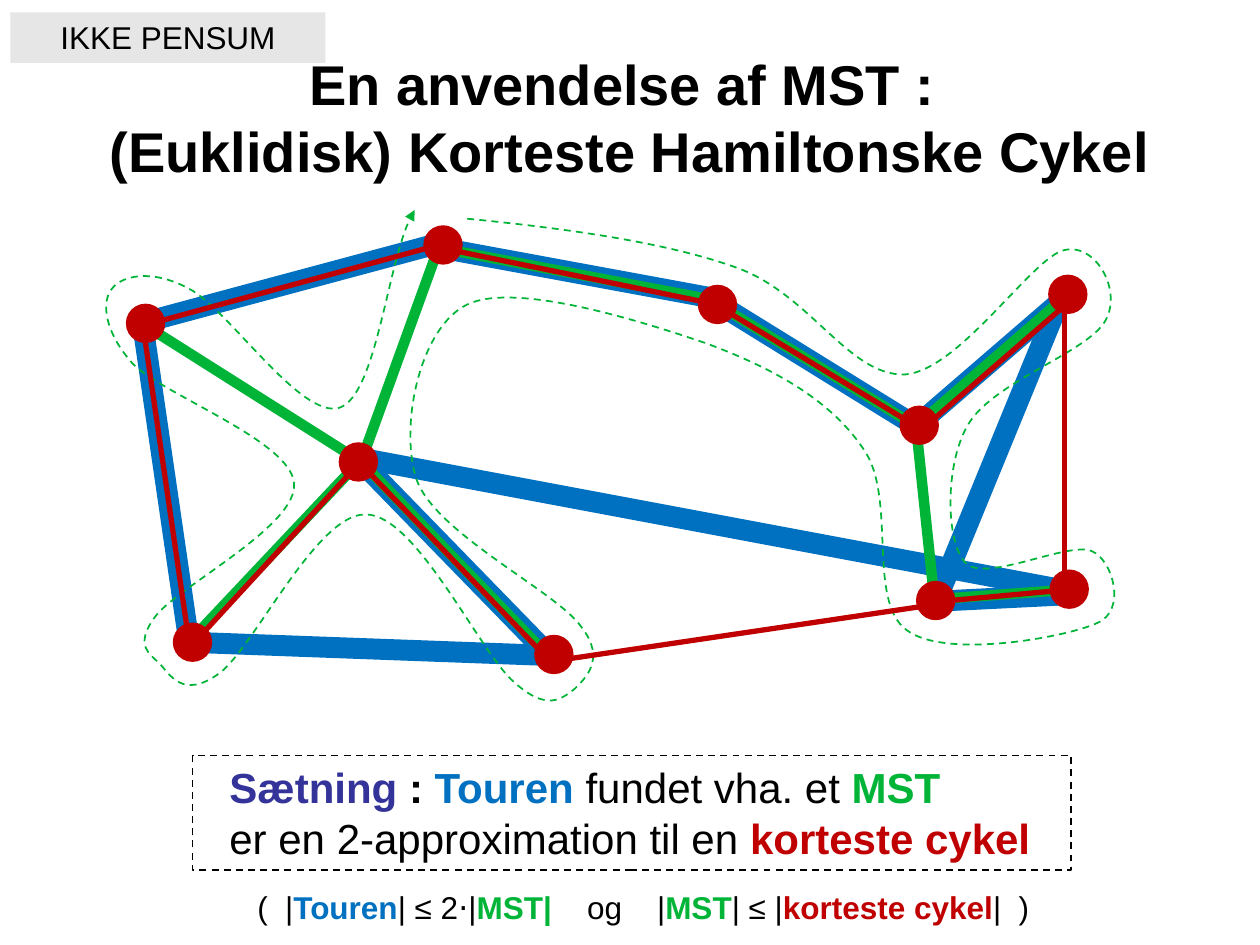
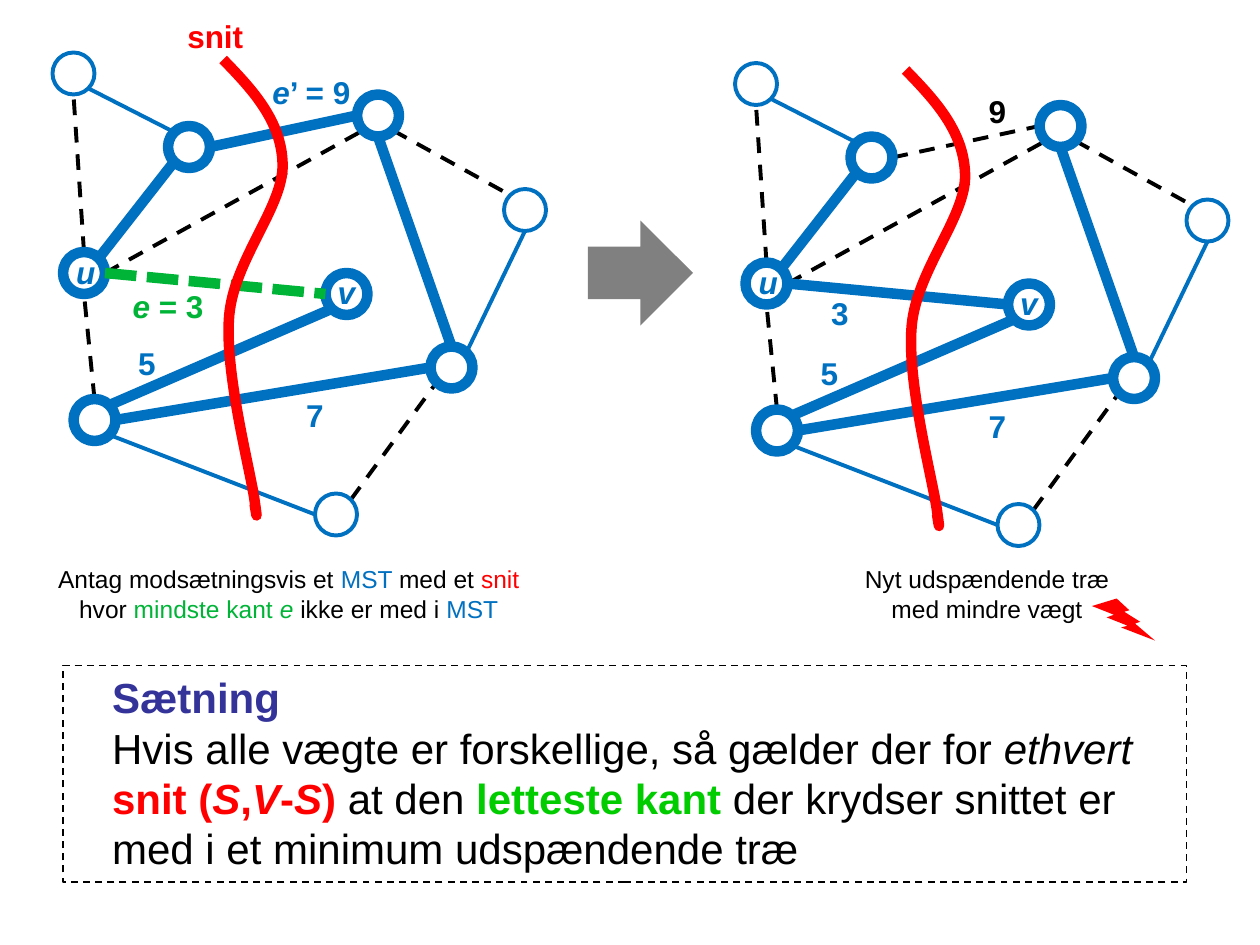
"""Build two slides about minimum spanning trees."""
from typing import NamedTuple

from lxml.etree import SubElement
from pptx import Presentation
from pptx.dml.color import RGBColor
from pptx.enum.dml import MSO_LINE as Dash
from pptx.enum.shapes import MSO_CONNECTOR, MSO_SHAPE as Shape
from pptx.enum.text import MSO_ANCHOR as Anchor, MSO_AUTO_SIZE, PP_ALIGN as Align
from pptx.oxml.ns import qn
from pptx.util import Pt

BLACK = RGBColor(0x00, 0x00, 0x00)
BLUE = RGBColor(0x00, 0x70, 0xC0)
GREEN = RGBColor(0x00, 0xB4, 0x38)
BRIGHT_GREEN = RGBColor(0x00, 0xCC, 0x00)
DARK_RED = RGBColor(0xC0, 0x00, 0x00)
RED = RGBColor(0xFF, 0x00, 0x00)
INDIGO = RGBColor(0x33, 0x33, 0x99)
GRAY = RGBColor(0x80, 0x80, 0x80)
LIGHT_GRAY = RGBColor(0xE6, 0xE6, 0xE6)
FONT = "Arial"


class Run(NamedTuple):
    """A stretch of text in one style."""
    text: str
    color: RGBColor = BLACK
    bold: bool = False
    italic: bool = False


class Box(NamedTuple):
    """A rectangle in points."""
    x: float
    y: float
    w: float
    h: float


class Pen(NamedTuple):
    """A line style."""
    color: RGBColor
    width: float
    dash: Dash = Dash.SOLID


class Tree(NamedTuple):
    """A set of roads given by the coordinates of both ends."""
    pen: Pen
    roads: list


class Edge(NamedTuple):
    """A graph edge between two compass points on vertices."""
    start: str
    start_side: str
    end: str
    end_side: str
    pen: Pen


class Label(NamedTuple):
    """A short text beside the graph."""
    runs: list
    x: float
    y: float
    w: float = 36


THICK, THIN = Pen(BLUE, 6), Pen(BLUE, 2.25)
DASHED = Pen(BLACK, 2.25, Dash.DASH)
LIGHTEST = Pen(GREEN, 6, Dash.SQUARE_DOT)
FRAME = Pen(BLACK, 1, Dash.DASH)
CUT = Pen(RED, 6)
WALK = Pen(GREEN, 1, Dash.DASH)

CITIES = [
    (83.2, 184.8), (534.7, 343.2), (204.8, 264), (525.3, 243), (316.5, 374),
    (110, 367), (253.2, 140), (611, 336.7), (410, 174), (610.2, 168.2),
]
CITY_SIZE = 22.5
TOUR = Tree(Pen(BLUE, 12), [
    (207, 262, 607, 337), (108, 367, 312, 374.5), (314, 374.5, 206.5, 264),
    (108, 367, 81.5, 185), (408, 170.5, 253.5, 142), (523.5, 243.5, 407, 171.5),
    (607, 168, 535, 343.5), (611, 168, 523.5, 243.5), (607, 340, 537, 343.5),
    (249, 139.5, 81.5, 184.5)])
MST = Tree(Pen(GREEN, 6), [
    (108, 367, 207, 262), (313, 374.5, 206.5, 264), (207, 262, 251, 140.5),
    (206.5, 264, 81.5, 185), (408, 171.5, 252.5, 142), (523.5, 243.5, 406, 171.5),
    (523.5, 243.5, 534, 343.5), (610.5, 168, 523.5, 243.5), (610.5, 337, 534, 342.5)])
SHORTEST = Tree(Pen(DARK_RED, 3), [
    (314.5, 378, 534, 345.5), (108.5, 370, 204.5, 265.5), (314.5, 378, 208, 267),
    (108.5, 370, 82, 188), (409.5, 174, 253.5, 142), (523.5, 243.5, 410.5, 175),
    (608.5, 171.5, 608.5, 340.5), (612, 171.5, 525, 247), (610.5, 337, 534, 344),
    (82, 186, 252.5, 139.5)])
WALK_POINTS = [
    (267, 125), (318, 130), (380, 138), (421, 153), (463, 168), (485, 215), (517, 214),
    (548, 212), (590, 147), (608, 143), (627, 138), (644, 170), (629, 187),
    (614, 204), (566, 220), (553, 243), (540, 265), (540, 310), (552, 322),
    (564, 333), (611, 309), (624, 315), (636, 320), (644, 349), (627, 356),
    (610, 364), (540, 377), (518, 360), (495, 343), (513, 283), (493, 256),
    (474, 228), (441, 210), (403, 196), (365, 183), (294, 161), (267, 174),
    (240, 187), (228, 243), (238, 274), (249, 305), (318, 338), (332, 358),
    (347, 377), (334, 388), (328, 394), (321, 399), (313, 407), (294, 390),
    (274, 373), (238, 294), (209, 294), (181, 293), (144, 372), (125, 385),
    (104, 400), (97, 385), (91, 379), (86, 374), (76, 369), (89, 352),
    (102, 335), (171, 300), (168, 276), (166, 252), (94, 226), (76, 208),
    (59, 189), (58, 172), (64, 165), (69, 158), (86, 153), (108, 165),
    (130, 176), (172, 240), (194, 233), (215, 226), (222, 143), (237, 120),
]

VERTICES = {
    "a": (108, 84), "b": (216, 66), "u": (48, 156), "v": (198, 168),
    "low": (54, 240), "right": (258, 210),
    "top": (42, 42), "east": (300, 120), "south": (192, 294),
}
LEAVES = {"top", "east", "south"}
RADIUS = 12
DIAGONAL = RADIUS * 0.5 ** 0.5
SIDES = {
    "n": (0, -RADIUS), "s": (0, RADIUS), "w": (-RADIUS, 0), "e": (RADIUS, 0),
    "nw": (-DIAGONAL, -DIAGONAL), "ne": (DIAGONAL, -DIAGONAL),
    "sw": (-DIAGONAL, DIAGONAL), "se": (DIAGONAL, DIAGONAL),
}
SHARED_EDGES = [
    Edge("u", "e", "b", "sw", DASHED), Edge("south", "ne", "right", "sw", DASHED),
    Edge("u", "n", "top", "s", DASHED), Edge("low", "n", "u", "s", DASHED),
    Edge("b", "se", "east", "nw", DASHED), Edge("a", "sw", "u", "ne", THICK),
    Edge("b", "s", "right", "n", THICK), Edge("right", "w", "low", "e", THICK),
    Edge("low", "ne", "v", "sw", THICK), Edge("a", "nw", "top", "se", THIN),
    Edge("right", "ne", "east", "s", THIN), Edge("low", "se", "south", "w", THIN),
]
SHARED_LABELS = [
    Label([Run("5", BLUE, True)], 66, 193), Label([Run("7", BLUE, True)], 162, 223),
    Label([Run("u", BLUE, True, True)], 31, 141),
    Label([Run("v", BLUE, True, True)], 180, 152.5),
]
BEFORE_LABELS = [
    Label([Run("e", BLUE, True, True), Run("’ = 9", BLUE, True)], 142, 38, 72),
    Label([Run("e", GREEN, True, True), Run(" = 3", GREEN, True)], 66, 160.5, 60),
    Label([Run("snit", RED, True)], 78, 6, 90),
]
AFTER_LABELS = [Label([Run("9", BLACK, True)], 162, 43),
                Label([Run("3", BLUE, True)], 72, 158.5)]
CUT_POINTS = [
    (127.5, 34), (144, 51), (161, 69), (161.5, 94), (162, 118), (134, 148), (131, 180),
    (128, 212), (143, 268), (145.5, 286), (148, 304), (145.5, 288), (145.5, 288),
]


def write(tf, paragraphs: list, size: float, align=Align.CENTER, indent: float = 0) -> None:
    """Fill a text frame with paragraphs of styled runs."""
    tf.word_wrap = True
    for i, runs in enumerate(paragraphs):
        p = tf.add_paragraph() if i else tf.paragraphs[0]
        p.alignment = align
        if indent:
            pr = p._p.get_or_add_pPr()
            pr.set("marL", str(Pt(indent)))
            pr.set("indent", "0")
        for run in runs:
            r = p.add_run()
            r.text = run.text
            r.font.name, r.font.size = FONT, Pt(size)
            r.font.bold, r.font.italic = run.bold, run.italic
            r.font.color.rgb = run.color


def stroke(line, pen: Pen) -> None:
    """Apply a pen to a line format."""
    line.color.rgb = pen.color
    line.width = Pt(pen.width)
    line.dash_style = pen.dash


def add_shape(slide, kind: Shape, box: Box, fill=None, pen=None):
    """Add a preset shape with an optional fill and outline."""
    sp = slide.shapes.add_shape(kind, *map(Pt, box))
    sp.shadow.inherit = False
    sp.text_frame.vertical_anchor = Anchor.TOP
    if fill is None:
        sp.fill.background()
    else:
        sp.fill.solid()
        sp.fill.fore_color.rgb = fill
    if pen is None:
        sp.line.fill.background()
    else:
        stroke(sp.line, pen)
    return sp


def add_circle(slide, center: tuple, size: float, fill=None, pen=None) -> None:
    """Add a circle around a center."""
    x, y = center
    add_shape(slide, Shape.OVAL, Box(x - size / 2, y - size / 2, size, size), fill, pen)


def add_text(slide, box: Box, paragraphs: list, size: float = 18, align=Align.CENTER):
    """Add a text box."""
    sp = slide.shapes.add_textbox(*map(Pt, box))
    write(sp.text_frame, paragraphs, size, align)
    return sp


def add_theorem(slide, box: Box, paragraphs: list, indent: float) -> None:
    """Add a dashed frame holding a theorem."""
    sp = add_shape(slide, Shape.RECTANGLE, box, pen=FRAME)
    write(sp.text_frame, paragraphs, 24, Align.LEFT, indent)


def add_line(slide, start: tuple, end: tuple, pen: Pen) -> None:
    """Add a straight line without a shadow."""
    c = slide.shapes.add_connector(MSO_CONNECTOR.STRAIGHT, *map(Pt, (*start, *end)))
    stroke(c.line, pen)
    SubElement(c.element.spPr, qn("a:effectLst"))


def shifted(point: tuple, by: tuple) -> tuple:
    """Move a point."""
    return point[0] + by[0], point[1] + by[1]


def add_curve(slide, points: list, pen: Pen, arrow: bool = False) -> None:
    """Add an open outline and bend each three segments into one cubic curve."""
    fb = slide.shapes.build_freeform(*map(Pt, points[0]))
    fb.add_line_segments([tuple(map(Pt, q)) for q in points[1:]], close=False)
    sp = fb.convert_to_shape()
    outline = next(sp.element.iter(qn("a:moveTo"))).getparent()
    segments = outline.findall(qn("a:lnTo"))
    for i in range(0, len(segments), 3):
        curve = SubElement(outline, qn("a:cubicBezTo"))
        for segment in segments[i:i + 3]:
            curve.append(segment[0])
            outline.remove(segment)
    sp.shadow.inherit = False
    sp.fill.background()
    stroke(sp.line, pen)
    if arrow:
        SubElement(sp.element.spPr.find(qn("a:ln")), qn("a:tailEnd"), type="triangle")


def add_tree(slide, tree: Tree) -> None:
    """Draw the roads of a tree or cycle."""
    for road in tree.roads:
        add_line(slide, road[:2], road[2:], tree.pen)


def add_edges(slide, origin: tuple, edges: list) -> None:
    """Draw graph edges from vertex side to vertex side."""
    for e in edges:
        start = shifted(VERTICES[e.start], SIDES[e.start_side])
        end = shifted(VERTICES[e.end], SIDES[e.end_side])
        add_line(slide, shifted(start, origin), shifted(end, origin), e.pen)


def add_graph(slide, origin: tuple, edges: list, labels: list) -> None:
    """Draw the graph with its cut at an origin, dashed edges behind the vertices."""
    edges = SHARED_EDGES + edges
    add_edges(slide, origin, [e for e in edges if e.pen == DASHED])
    for name, center in VERTICES.items():
        add_circle(slide, shifted(center, origin), 2 * RADIUS,
                   pen=THIN if name in LEAVES else THICK)
    add_edges(slide, origin, [e for e in edges if e.pen != DASHED])
    for label in SHARED_LABELS + labels:
        x, y = shifted((label.x, label.y), origin)
        add_text(slide, Box(x, y, label.w, 29), [label.runs])
    add_curve(slide, [shifted(q, origin) for q in CUT_POINTS], CUT)


def add_title(slide, text: str) -> None:
    """Fill and format the title placeholder."""
    sp = slide.shapes.title
    sp.left, sp.top, sp.width, sp.height = map(Pt, (36, 21.5, 648, 90))
    tf = sp.text_frame
    tf.auto_size, tf.vertical_anchor = MSO_AUTO_SIZE.NONE, Anchor.MIDDLE
    p = tf.paragraphs[0]
    p.text = text
    p.alignment = Align.CENTER
    for r in p.runs:
        r.font.name, r.font.size, r.font.bold = FONT, Pt(32), True
        r.font.color.rgb = BLACK


def build_tour_slide(prs) -> None:
    """Show the tour, the spanning tree and the shortest cycle."""
    slide = prs.slides.add_slide(prs.slide_layouts[5])
    add_title(slide, "En anvendelse af MST : \v(Euklidisk) Korteste Hamiltonske Cykel")
    add_tree(slide, TOUR)
    add_tree(slide, MST)
    add_curve(slide, WALK_POINTS, WALK, arrow=True)
    for center in CITIES:
        add_circle(slide, center, CITY_SIZE, fill=DARK_RED)
    add_tree(slide, SHORTEST)
    tour, mst = Run("Touren", BLUE, True), Run("MST", GREEN, True)
    cycle = Run("korteste cykel", DARK_RED, True)
    add_theorem(slide, Box(110, 431.7, 502, 65.5), [
        [Run("Sætning", INDIGO, True), Run(" : ", BLACK, True), tour,
         Run(" fundet vha. et "), mst],
        [Run("er en 2-approximation til en "), cycle]], 14)
    sp = add_text(slide, Box(109, 504, 503, 29), [[
        Run("(\t|"), tour, Run("| ≤ 2⋅|"), Run("MST|", GREEN, True), Run("\tog\t|"),
        mst, Run("| ≤ |"), cycle, Run("|\t)")]], align=Align.LEFT)
    sp.text_frame.margin_left = Pt(38)
    tabs = SubElement(sp.text_frame.paragraphs[0]._p.get_or_add_pPr(), qn("a:tabLst"))
    for stop in (16, 188.5, 228.5, 435):
        SubElement(tabs, qn("a:tab"), pos=str(Pt(stop)), algn="l")
    tag = add_shape(slide, Shape.RECTANGLE, Box(6, 7, 180, 29), fill=LIGHT_GRAY)
    write(tag.text_frame, [[Run("IKKE PENSUM")]], 18)


def build_cut_slide(prs) -> None:
    """Show how swapping edges across a cut improves the tree."""
    slide = prs.slides.add_slide(prs.slide_layouts[6])
    add_graph(slide, (390, 6), [Edge("a", "e", "b", "w", DASHED),
                                Edge("u", "e", "v", "w", THICK)], AFTER_LABELS)
    add_graph(slide, (0, 0), [Edge("a", "e", "b", "w", THICK),
                              Edge("u", "e", "v", "w", LIGHTEST)], BEFORE_LABELS)
    add_shape(slide, Shape.RIGHT_ARROW, Box(336, 126, 60, 60), fill=GRAY)
    add_text(slide, Box(486, 319, 156, 41),
             [[Run("Nyt udspændende træ med mindre vægt")]], 14)
    add_text(slide, Box(24, 319, 282, 41), [[
        Run("Antag modsætningsvis et "), Run("MST ", BLUE), Run("med et "),
        Run("snit", RED), Run(" hvor "), Run("mindste kant ", GREEN),
        Run("e", GREEN, italic=True), Run(" ikke er med i "), Run("MST", BLUE)]], 14)
    add_shape(slide, Shape.LIGHTNING_BOLT, Box(624, 342, 36, 24), fill=RED)
    add_theorem(slide, Box(36, 380.3, 642, 123.7), [
        [Run("Sætning", INDIGO, True)],
        [Run("Hvis alle vægte er forskellige, så gælder der for "),
         Run("ethvert ", italic=True), Run("snit (", RED, True),
         Run("S", RED, True, True), Run(",", RED, True), Run("V", RED, True, True),
         Run("-", RED, True), Run("S", RED, True, True), Run(") ", RED, True),
         Run("at den "), Run("letteste kant ", BRIGHT_GREEN, True),
         Run("der krydser snittet er med i et minimum udspændende træ")]], 21)


def main() -> None:
    """Create the presentation."""
    prs = Presentation()
    prs.slide_width, prs.slide_height = Pt(720), Pt(540)
    build_tour_slide(prs)
    build_cut_slide(prs)
    prs.save("out.pptx")


if __name__ == "__main__":
    main()
